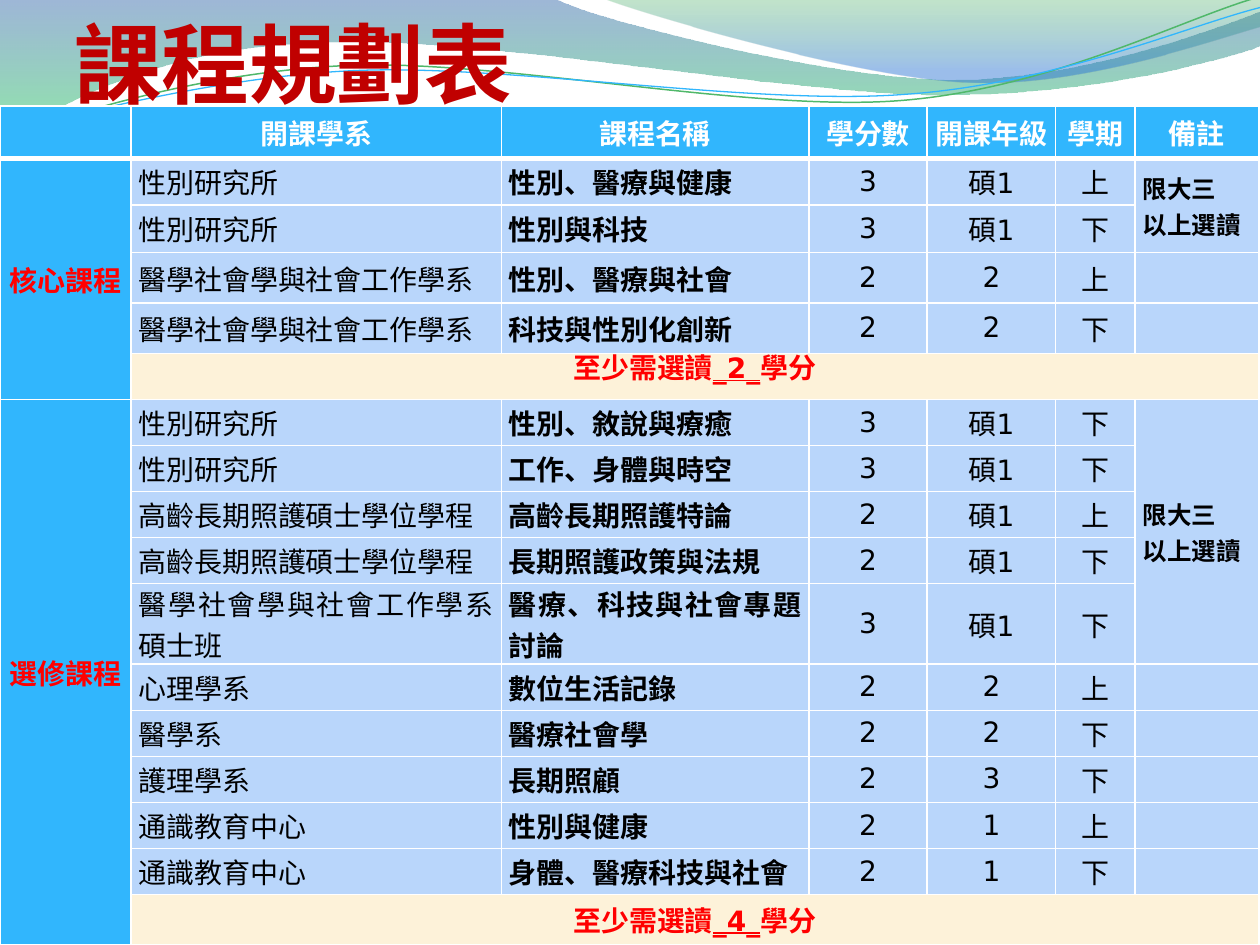
from dataclasses import dataclass

from lxml.etree import Element, SubElement
from pptx import Presentation
from pptx.dml.color import RGBColor
from pptx.enum.text import MSO_ANCHOR, PP_ALIGN
from pptx.oxml.ns import qn
from pptx.util import Inches, Pt


@dataclass(frozen=True)
class Theme:
    """Colours, fonts and type sizes of the slide."""
    title: str = "C00000"
    header: str = "31B6FD"
    body: str = "B9D6FB"
    total: str = "FDF2D9"
    accent: str = "FF0000"
    dark: str = "000000"
    light: str = "FFFFFF"
    green_line: str = "50B86A"
    blue_line: str = "31B6FD"
    sans: str = "DejaVu Sans"
    serif: str = "Times New Roman"
    title_size: int = 50
    table_size: int = 16
    remark_size: int = 14


THEME = Theme()

UNITS = 1000
BAND = [(0, 0), (4.4, -0.01), (4.76, 0.17, 6.64, 0.63, 7.58, 0.63),
        (8.53, 0.63, 9.58, 0.26, 10, 0.09), (10.01, 0.36),
        (9.83, 0.44, 8.7, 0.76, 7.46, 0.75),
        (6.22, 0.75, 3.82, 0.28, 2.57, 0.34),
        (1.29, 0.36, 0.46, 0.83, -0.01, 1.13)]
CREST = [(4.79, -0.01), (5.09, 0.11, 6.82, 0.62, 7.69, 0.65),
         (8.56, 0.69, 9.61, 0.32, 10, 0.21), (10, 0)]
GREEN_WAVE = [(0, 1.11), (0.48, 0.93, 1.58, 0.57, 2.77, 0.52),
              (3.95, 0.47, 5.93, 0.89, 7.13, 0.8),
              (8.33, 0.71, 9.38, 0.15, 9.98, -0.02)]
BLUE_WAVE = [(0, 1.04), (0.47, 0.96, 1.64, 0.61, 2.83, 0.56),
             (4.03, 0.51, 5.97, 0.84, 7.17, 0.75),
             (8.36, 0.67, 9.41, 0.21, 10, 0.06)]

HEADINGS = ["", "開課學系", "課程名稱", "學分數", "開課年級", "學期", "備註"]
COLUMN_WIDTHS = [1.04, 2.94, 2.44, 0.94, 1.02, 0.63, 0.98]
SPECIAL_HEIGHTS = {0: 0.42, 2: 0.38, 3: 0.4, 4: 0.4, 10: 0.64, 16: 0.4}
REMARK = ["限大三", "以上選讀"]
CORE = [
    ("性別研究所", "性別、醫療與健康", "3", "碩1", "上"),
    ("性別研究所", "性別與科技", "3", "碩1", "下"),
    ("醫學社會學與社會工作學系", "性別、醫療與社會", "2", "2", "上"),
    ("醫學社會學與社會工作學系", "科技與性別化創新", "2", "2", "下"),
]
ELECTIVE = [
    ("性別研究所", "性別、敘說與療癒", "3", "碩1", "下"),
    ("性別研究所", "工作、身體與時空", "3", "碩1", "下"),
    ("高齡長期照護碩士學位學程", "高齡長期照護特論", "2", "碩1", "上"),
    ("高齡長期照護碩士學位學程", "長期照護政策與法規", "2", "碩1", "下"),
    ("醫學社會學與社會工作學系碩士班", "醫療、科技與社會專題討論", "3", "碩1", "下"),
    ("心理學系", "數位生活記錄", "2", "2", "上"),
    ("醫學系", "醫療社會學", "2", "2", "下"),
    ("護理學系", "長期照顧", "2", "3", "下"),
    ("通識教育中心", "性別與健康", "2", "1", "上"),
    ("通識教育中心", "身體、醫療科技與社會", "2", "1", "下"),
]


def add_span(para, text, *, size=THEME.table_size, color=THEME.dark, bold=False,
             underline=False, font=THEME.sans, align=PP_ALIGN.CENTER):
    """Add formatted text to a paragraph and align it."""
    para.alignment = align
    span = para.add_run()
    span.text = text
    span.font.name, span.font.size = font, Pt(size)
    span.font.bold, span.font.underline = bold, underline
    span.font.color.rgb = RGBColor.from_string(color)


def add_outline(page, left, top, outline, close):
    """Draw an outline of lines and cubic curves with its origin at the given corner."""
    points = [(x * UNITS, y * UNITS) for segment in outline
              for x, y in zip(segment[::2], segment[1::2])]
    builder = page.shapes.build_freeform(*points[0], scale=Inches(1) / UNITS)
    builder.add_line_segments(points[1:], close=close)
    shape = builder.convert_to_shape(left, top)
    shape.shadow.inherit = False
    lines = iter(list(shape.element.iter(qn("a:lnTo"))))
    for segment in outline[1:]:
        pieces = [next(lines) for _ in segment[::2]]
        if len(pieces) == 3:
            curve = Element(qn("a:cubicBezTo"))
            pieces[0].addprevious(curve)
            for piece in pieces:
                curve.append(piece[0])
                piece.getparent().remove(piece)
    return shape


def add_ribbon(page, left, top, outline, stops):
    """Draw a closed shape with a translucent gradient from top to bottom."""
    shape = add_outline(page, left, top, outline, close=True)
    shape.line.fill.background()
    shape.fill.gradient()
    shape.fill.gradient_angle = 270
    for stop, (position, color, _) in zip(shape.fill.gradient_stops, stops):
        stop.position = position
        stop.color.rgb = RGBColor.from_string(color)
    for color, (_, _, opacity) in zip(shape.element.spPr.iter(qn("a:srgbClr")), stops):
        SubElement(color, qn("a:alpha"), val=str(opacity * 1000))


def add_wave(page, left, top, outline, color, width):
    """Draw an open curved line."""
    shape = add_outline(page, left, top, outline, close=False)
    shape.fill.background()
    shape.line.color.rgb = RGBColor.from_string(color)
    shape.line.width = Pt(width)


def add_backdrop(page, left, top):
    """Place the ribbons and waves along the top of the slide."""
    add_ribbon(page, left, top, BAND, [(0, "2960A7", 45), (1, "35DA5E", 55)])
    add_ribbon(page, left, top, CREST, [(0, "36A752", 30), (0.8, "2472D3", 45)])
    add_wave(page, left, top, GREEN_WAVE, THEME.green_line, 0.85)
    add_wave(page, left, top, BLUE_WAVE, THEME.blue_line, 0.75)


def add_title(page, left, top, width, height):
    """Place the slide title at the bottom of its box."""
    frame = page.shapes.add_textbox(left, top, width, height).text_frame
    frame.word_wrap = True
    frame.vertical_anchor = MSO_ANCHOR.BOTTOM
    frame.margin_left = frame.margin_right = frame.margin_bottom = 0
    add_span(frame.paragraphs[0], "課程規劃表", size=THEME.title_size,
             color=THEME.title, bold=True, align=PP_ALIGN.LEFT)


def add_borders(properties, bottom):
    """Give a cell thin light borders and a bottom border of its own width."""
    sides = {"a:lnL": 1, "a:lnR": 1, "a:lnT": 1, "a:lnB": bottom}
    for index, (side, width) in enumerate(sides.items()):
        line = Element(qn(side), w=str(Pt(width)))
        fill = SubElement(line, qn("a:solidFill"))
        SubElement(fill, qn("a:srgbClr"), val=THEME.light)
        properties.insert(index, line)


def fill_group(table, first, name, courses, remark_rows, credits):
    """Fill one course group and return the paragraph of its credit total."""
    last = first + len(courses)
    table.cell(first, 0).merge(table.cell(last, 0))
    add_span(table.cell(first, 0).text_frame.paragraphs[0], name,
             color=THEME.accent, bold=True)
    for row, course in enumerate(courses, first):
        for column, text in enumerate(course, 1):
            serif = course[0] == "心理學系" and column == 5
            add_span(table.cell(row, column).text_frame.paragraphs[0], text,
                     bold=column == 2, font=THEME.serif if serif else THEME.sans,
                     align=PP_ALIGN.JUSTIFY if column < 3 else PP_ALIGN.CENTER)
    remark = table.cell(first, 6)
    remark.merge(table.cell(first + remark_rows - 1, 6))
    frame = remark.text_frame
    for para, text in zip((frame.paragraphs[0], frame.add_paragraph()), REMARK):
        add_span(para, text, size=THEME.remark_size, bold=True, align=PP_ALIGN.JUSTIFY)
    total = table.cell(last, 1)
    total.merge(table.cell(last, 6))
    total.fill.fore_color.rgb = RGBColor.from_string(THEME.total)
    para = total.text_frame.paragraphs[0]
    for text in ("至少需選讀", f"_{credits}_", "學分"):
        add_span(para, text, color=THEME.accent, bold=True, underline="_" in text)
    return para


def add_course_table(page, left, top, width, height):
    """Place the table of core and elective courses."""
    rows = len(CORE) + len(ELECTIVE) + 3
    holder = page.shapes.add_table(rows, len(HEADINGS), left, top, width, height)
    table = holder.table
    table.horz_banding = False
    for column, inches in zip(table.columns, COLUMN_WIDTHS):
        column.width = Inches(inches)
    special = sum(Inches(inches) for inches in SPECIAL_HEIGHTS.values())
    regular = (height - special) // (rows - len(SPECIAL_HEIGHTS))
    for index, row in enumerate(table.rows):
        row.height = Inches(SPECIAL_HEIGHTS[index]) if index in SPECIAL_HEIGHTS else regular
        for column, cell in enumerate(row.cells):
            cell.margin_left = cell.margin_right = Inches(0.06)
            cell.margin_top = cell.margin_bottom = 0
            cell.vertical_anchor = MSO_ANCHOR.MIDDLE
            cell.fill.solid()
            color = THEME.body if index and column else THEME.header
            cell.fill.fore_color.rgb = RGBColor.from_string(color)
    for index, properties in enumerate(holder.element.iter(qn("a:tcPr"))):
        add_borders(properties, bottom=3 if index < len(HEADINGS) else 1)
    for column, heading in enumerate(HEADINGS):
        if heading:
            add_span(table.cell(0, column).text_frame.paragraphs[0], heading,
                     color=THEME.light, bold=True)
    core_total = fill_group(table, 1, "核心課程", CORE, 2, 2)
    core_total.line_spacing = Pt(12)
    fill_group(table, len(CORE) + 2, "選修課程", ELECTIVE, 5, 4)


def main():
    """Build and save the slide."""
    deck = Presentation()
    deck.slide_width, deck.slide_height = Inches(10), Inches(7.5)
    page = deck.slides.add_slide(deck.slide_layouts[6])
    add_backdrop(page, 0, 0)
    add_title(page, Inches(0.59), Inches(-0.34), Inches(9), Inches(1.25))
    add_course_table(page, 0, Inches(0.84), Inches(10), Inches(6.66))
    deck.save("out.pptx")


if __name__ == "__main__":
    main()
